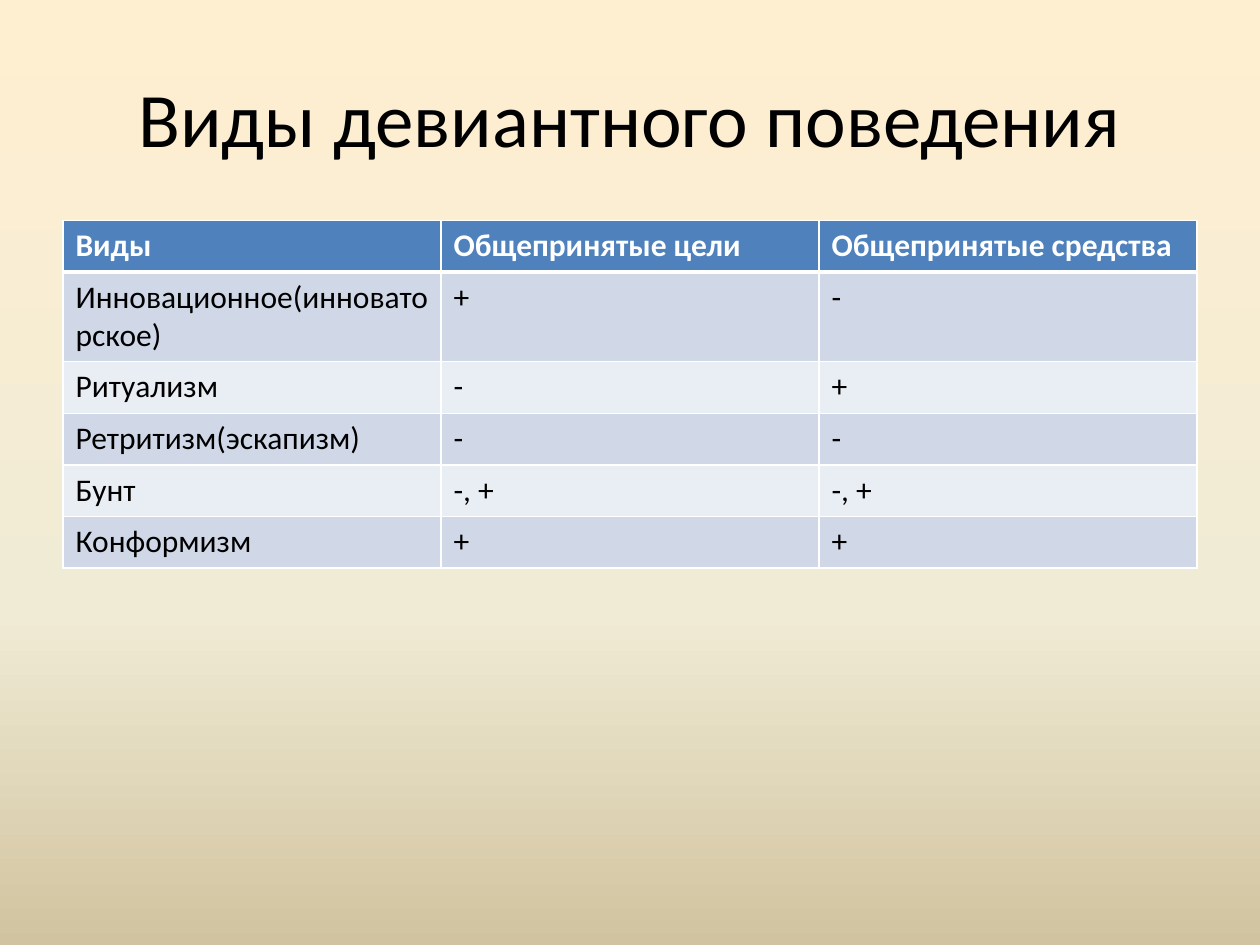
import copy
from dataclasses import dataclass

import lxml.etree
import pptx
import pptx.dml.color
import pptx.enum.text
import pptx.oxml.ns
import pptx.slide
import pptx.table
import pptx.util

Inches = pptx.util.Inches
qn = pptx.oxml.ns.qn


@dataclass(frozen=True)
class Theme:
    font: str = "Calibri"
    title_size: float = 44
    table_size: float = 18
    text: str = "000000"
    header_text: str = "FFFFFF"
    header_fill: str = "4F81BD"
    band_fills: tuple[str, str] = ("D0D8E8", "E9EDF4")
    border: str = "FFFFFF"
    thin_border: float = 1
    thick_border: float = 3
    background: tuple[tuple[float, str], ...] = (
        (0, "FFEFD1"),
        (0.65, "F0EBD5"),
        (1, "D1C39F"),
    )


@dataclass(frozen=True)
class Row:
    kind: str
    goals: str
    means: str


THEME = Theme()
TITLE = "Виды девиантного поведения"
ROWS = (
    Row("Виды", "Общепринятые цели", "Общепринятые средства"),
    Row("Инновационное(инноваторское)", "+", "-"),
    Row("Ритуализм", "-", "+"),
    Row("Ретритизм(эскапизм)", "-", "-"),
    Row("Бунт", "-, +", "-, +"),
    Row("Конформизм", "+", "+"),
)


def color(value: str) -> pptx.dml.color.RGBColor:
    return pptx.dml.color.RGBColor.from_string(value)


def style_paragraph(paragraph, size: float, text_color: str, bold: bool = False) -> None:
    font = paragraph.font
    font.name = THEME.font
    font.size = pptx.util.Pt(size)
    font.bold = bold
    font.color.rgb = color(text_color)


def paint_background(slide: pptx.slide.Slide) -> None:
    fill = slide.background.fill
    fill.gradient()
    fill.gradient_angle = 270
    stop_list = slide.element.find(f".//{qn('a:gsLst')}")
    stop_list.append(copy.deepcopy(stop_list[-1]))
    for stop, (position, value) in zip(fill.gradient_stops, THEME.background):
        stop.position = position
        stop.color.rgb = color(value)


def add_title(slide: pptx.slide.Slide) -> None:
    title = slide.shapes.title
    title.left, title.top = Inches(0.5), Inches(0.3)
    title.width, title.height = Inches(9), Inches(1.25)
    title.text_frame.text = TITLE
    title.text_frame.vertical_anchor = pptx.enum.text.MSO_ANCHOR.MIDDLE
    paragraph = title.text_frame.paragraphs[0]
    paragraph.alignment = pptx.enum.text.PP_ALIGN.CENTER
    style_paragraph(paragraph, THEME.title_size, THEME.text)


def set_borders(cell: pptx.table._Cell, top: float, bottom: float) -> None:
    properties = cell._tc.get_or_add_tcPr()
    widths = {"lnL": THEME.thin_border, "lnR": THEME.thin_border, "lnT": top, "lnB": bottom}
    for side, width in widths.items():
        line = lxml.etree.SubElement(properties, qn(f"a:{side}"), w=str(pptx.util.Pt(width)))
        solid = lxml.etree.SubElement(line, qn("a:solidFill"))
        lxml.etree.SubElement(solid, qn("a:srgbClr"), val=THEME.border)


def format_cell(cell: pptx.table._Cell, text: str, row_index: int) -> None:
    header = row_index == 0
    cell.text = text
    style_paragraph(
        cell.text_frame.paragraphs[0],
        THEME.table_size,
        THEME.header_text if header else THEME.text,
        header,
    )
    set_borders(
        cell,
        top=THEME.thick_border if row_index == 1 else THEME.thin_border,
        bottom=THEME.thick_border if header else THEME.thin_border,
    )
    cell.fill.solid()
    cell.fill.fore_color.rgb = color(
        THEME.header_fill if header else THEME.band_fills[(row_index - 1) % 2]
    )


def add_behaviour_table(slide: pptx.slide.Slide) -> None:
    row_height = Inches(0.41)
    table = slide.shapes.add_table(
        len(ROWS), 3, Inches(0.5), Inches(1.75), Inches(9), row_height * len(ROWS)
    ).table
    for row_index, row in enumerate(ROWS):
        for column_index, text in enumerate((row.kind, row.goals, row.means)):
            format_cell(table.cell(row_index, column_index), text, row_index)


def main() -> None:
    presentation = pptx.Presentation()
    presentation.slide_width, presentation.slide_height = Inches(10), Inches(7.5)
    slide = presentation.slides.add_slide(presentation.slide_layouts.get_by_name("Title Only"))
    paint_background(slide)
    add_title(slide)
    add_behaviour_table(slide)
    presentation.save("out.pptx")


if __name__ == "__main__":
    main()
